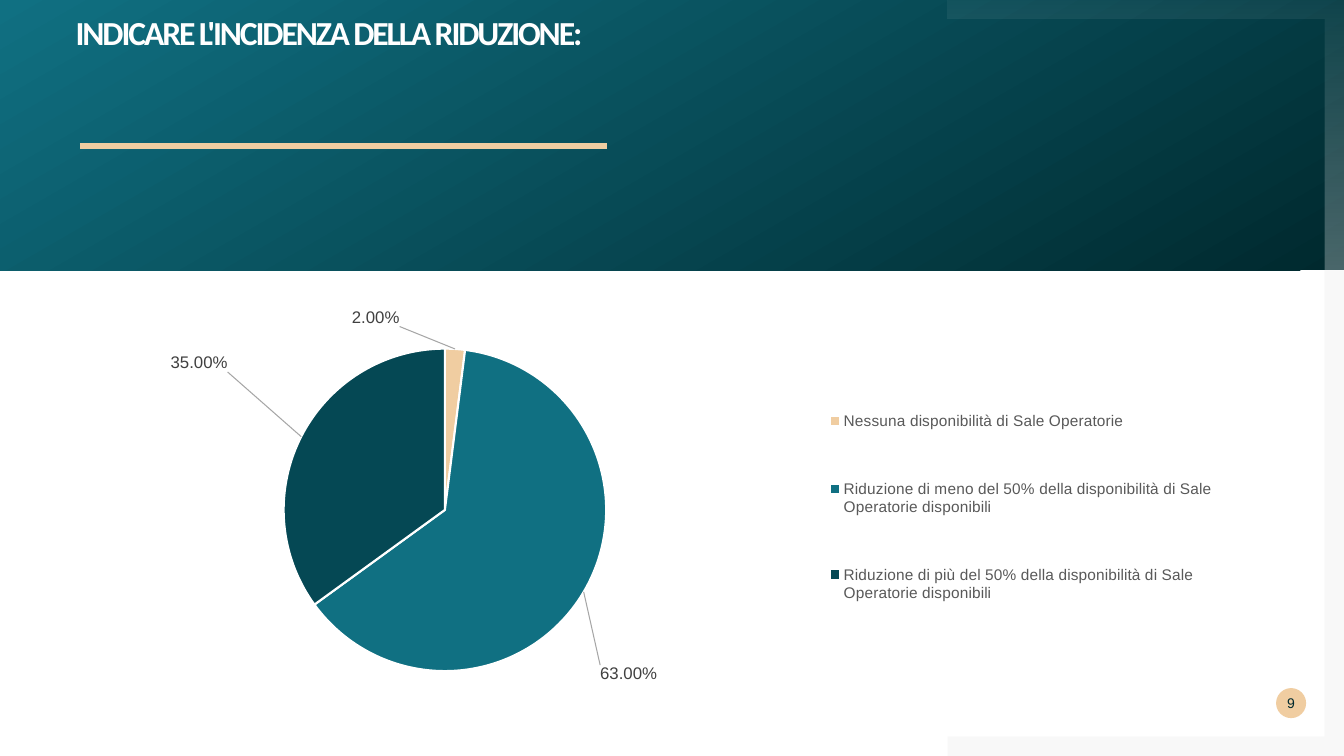
import copy
import pptx
import pptx.chart.data
import pptx.dml.color
import pptx.enum.chart
import pptx.enum.shapes
import pptx.enum.text
import pptx.oxml
import pptx.oxml.ns
import pptx.util

Pt = pptx.util.Pt
qn = pptx.oxml.ns.qn
SHAPE = pptx.enum.shapes.MSO_SHAPE
ALIGN = pptx.enum.text.PP_ALIGN
ANCHOR = pptx.enum.text.MSO_ANCHOR
CHART = pptx.enum.chart
HUES = {"dark": "00292E", "teal": "107082", "deep": "054854", "sand": "F0CDA1",
        "white": "FFFFFF", "gray": "808080", "text": "595959", "label": "404040",
        "lead": "A6A6A6"}
SLICES = [
    ("Nessuna disponibilità di Sale Operatorie", 2, "sand", (-0.07, -0.04)),
    ("Riduzione di meno del 50% della disponibilità di Sale Operatorie disponibili",
     63, "teal", (0.01, 0.17)),
    ("Riduzione di più del 50% della disponibilità di Sale Operatorie disponibili",
     35, "deep", (-0.06, -0.15)),
]


def hue(name):
    return pptx.dml.color.RGBColor.from_string(HUES[name])


def make(tag, **attrs):
    node = pptx.oxml.parse_xml(f"<{tag} {pptx.oxml.ns.nsdecls(tag.split(':')[0])}/>")
    for key, value in attrs.items():
        node.set(key, str(value))
    return node


def paint(shape, name):
    shape.shadow.inherit = False
    shape.line.fill.background()
    shape.fill.solid()
    shape.fill.fore_color.rgb = hue(name)


def blend(shape, names, angle):
    shape.fill.gradient()
    shape.fill.gradient_angle = angle
    for stop, name, place in zip(shape.fill.gradient_stops, names, (0, 1)):
        stop.color.rgb = hue(name)
        stop.position = place


def fade(shape, *shares):
    tones = shape.element.spPr.iter(qn("a:srgbClr"))
    for tone, share in zip(list(tones), shares):
        tone.append(make("a:alpha", val=share * 1000))


def block(slide, kind, name, left, top, width, height):
    shape = slide.shapes.add_shape(kind, Pt(left), Pt(top), Pt(width), Pt(height))
    paint(shape, name)
    return shape


def corner(slide, name, points):
    pen = slide.shapes.build_freeform(*points[0], scale=Pt(1))
    pen.add_line_segments(points[1:], close=True)
    shape = pen.convert_to_shape()
    paint(shape, name)
    return shape


def style(font, size, name, face="Arial", bold=False):
    font.size, font.name, font.bold = Pt(size), face, bold
    font.color.rgb = hue(name)


def write(shape, text, align=ALIGN.LEFT, anchor=ANCHOR.TOP, space=None, pitch=None, **look):
    frame = shape.text_frame
    frame.word_wrap = True
    frame.vertical_anchor = anchor
    frame.margin_left = frame.margin_right = frame.margin_top = frame.margin_bottom = 0
    para = frame.paragraphs[0]
    para.alignment, para.line_spacing = align, space
    run = para.add_run()
    run.text = text
    style(run.font, **look)
    if pitch:
        run.font._element.set("spc", str(int(pitch * 100)))


def rule(slide, name, left, top, right, weight):
    line = slide.shapes.add_connector(pptx.enum.shapes.MSO_CONNECTOR.STRAIGHT,
                                      Pt(left), Pt(top), Pt(right), Pt(top))
    line.line.color.rgb = hue(name)
    line.line.width = Pt(weight)
    line.element.spPr.append(make("a:effectLst"))


def layout(inner=False, **sides):
    node, box = make("c:layout"), make("c:manualLayout")
    node.append(box)
    if inner:
        box.append(make("c:layoutTarget", val="inner"))
    if "w" in sides:
        box.append(make("c:xMode", val="edge"))
        box.append(make("c:yMode", val="edge"))
    for side, value in sides.items():
        box.append(make("c:" + side, val=value))
    return node


def place(owner, index, node):
    for old in owner.findall(qn("c:layout")):
        owner.remove(old)
    owner.insert(index, node)


def label(series):
    marks = series.data_labels
    style(marks.font, 12, "label")
    marks.number_format = "0.00%"
    marks.number_format_is_linked = False
    marks.show_value = False
    marks.show_percentage = True
    marks.position = CHART.XL_LABEL_POSITION.OUTSIDE_END
    root = marks._element
    parts = [part for part in root if part.tag != qn("c:showLeaderLines")]
    for index, (*_, (x, y)) in enumerate(SLICES):
        item = make("c:dLbl")
        item.append(make("c:idx", val=index))
        item.append(layout(x=x, y=y))
        item.extend(copy.deepcopy(parts))
        root.insert(index, item)
    lead, look, line, fill = map(make, ("c:leaderLines", "c:spPr", "a:ln", "a:solidFill"))
    line.set("w", str(Pt(0.75)))
    fill.append(make("a:srgbClr", val=HUES["lead"]))
    line.append(fill)
    look.append(line)
    lead.append(look)
    root.append(lead)


def pie(slide, left, top, width, height):
    data = pptx.chart.data.CategoryChartData()
    data.categories = [piece[0] for piece in SLICES]
    data.add_series("Series 1", [piece[1] for piece in SLICES])
    chart = slide.shapes.add_chart(CHART.XL_CHART_TYPE.PIE, Pt(left), Pt(top),
                                   Pt(width), Pt(height), data).chart
    chart.has_title = False
    chart.font.size, chart.font.name = Pt(10), "Arial"
    chart.has_legend = True
    key = chart.legend
    key.position = CHART.XL_LEGEND_POSITION.RIGHT
    key.include_in_layout = False
    style(key.font, 11, "text")
    place(key._element, 1, layout(x=0.64, y=0.14, w=0.35, h=0.7))
    plot = chart.plots[0]
    plot.vary_by_categories = True
    place(plot._element.getparent(), 0,
          layout(True, x=0.055, y=0.107, w=0.507, h=0.781))
    series = plot.series[0]
    for index, piece in enumerate(SLICES):
        wedge = series.points[index].format
        wedge.fill.solid()
        wedge.fill.fore_color.rgb = hue(piece[2])
        wedge.line.color.rgb = hue("white")
        wedge.line.width = Pt(1.5)
    label(series)


def main():
    deck = pptx.Presentation()
    deck.slide_width, deck.slide_height = Pt(960), Pt(540)
    slide = deck.slides.add_slide(deck.slide_layouts[5])
    foot = corner(slide, "gray", [(946, 193), (960, 193), (960, 540), (677, 540),
                                  (677, 526), (946, 526)])
    fade(foot, 5)
    band = block(slide, SHAPE.RECTANGLE, "teal", 0, 0, 960, 193)
    blend(band, ("dark", "teal"), 120)
    edge = corner(slide, "white", [(677, 0), (960, 0), (960, 193), (946, 193),
                                   (946, 14), (677, 14)])
    blend(edge, ("white", "white"), 270)
    fade(edge, 5, 30)

    title = slide.shapes.title
    title.left, title.top, title.width, title.height = Pt(54), Pt(12), Pt(879), Pt(85)
    write(title, "INDICARE L'INCIDENZA DELLA RIDUZIONE:", space=0.9, pitch=-1.5,
          size=24, name="white", face="Calibri", bold=True)
    title.element.getparent().append(title.element)

    badge = block(slide, SHAPE.OVAL, "sand", 911.5, 491.5, 21.5, 21.5)
    write(badge, "9", ALIGN.CENTER, ANCHOR.MIDDLE, size=10, name="dark")
    rule(slide, "sand", 57, 104.3, 433.5, 4.32)
    pie(slide, 67, 217.5, 813, 295)
    deck.save("out.pptx")


if __name__ == "__main__":
    main()
